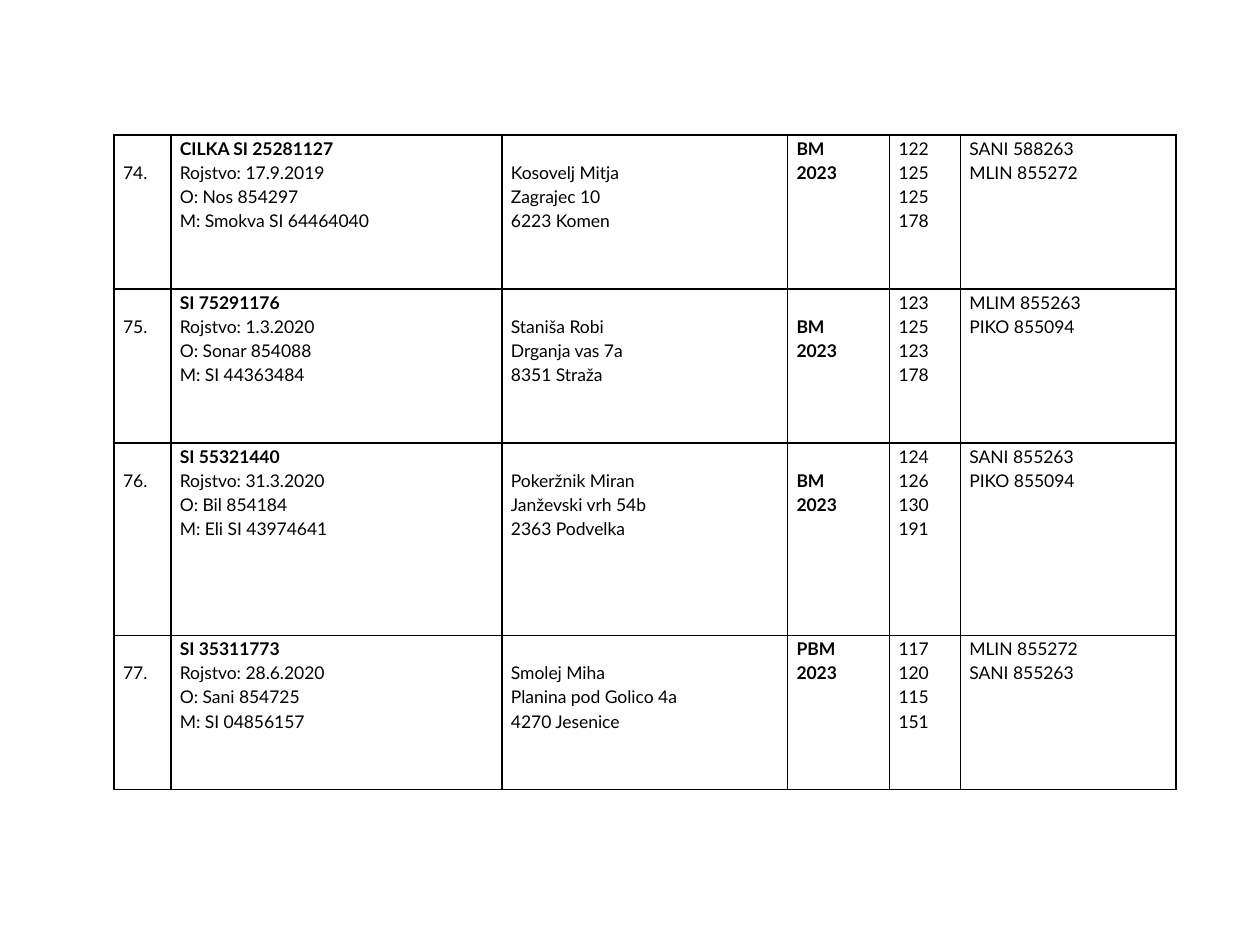
from lxml import etree
from pptx import Presentation
from pptx.dml.color import RGBColor
from pptx.enum.text import PP_ALIGN
from pptx.oxml.ns import qn
from pptx.util import Pt

JUSTIFY = PP_ALIGN.JUSTIFY
FONT = "Lato"
BLACK = "000000"
LINE_PITCH = 13.8
COL_WIDTHS = [32.4, 189.2, 163.2, 58.3, 40.5, 123.2]
ROW_HEIGHTS = [88, 88, 110, 88]
NUMBER, ANIMAL, OWNER, GRADE = range(4)

ROWS = [
    ["74.", "CILKA SI 25281127\nRojstvo: 17.9.2019\nO: Nos 854297\nM: Smokva SI 64464040",
     "Kosovelj Mitja\nZagrajec 10\n6223 Komen", "BM\n2023",
     "122\n125\n125\n178", "SANI 588263\nMLIN 855272"],
    ["75.", "SI 75291176\nRojstvo: 1.3.2020\nO: Sonar 854088\nM: SI 44363484",
     "Staniša Robi\nDrganja vas 7a\n8351 Straža", "BM\n2023",
     "123\n125\n123\n178", "MLIM 855263\nPIKO 855094"],
    ["76.", "SI 55321440\nRojstvo: 31.3.2020\nO: Bil 854184\nM: Eli SI 43974641",
     "Pokeržnik Miran\nJanževski vrh 54b\n2363 Podvelka", "BM\n2023",
     "124\n126\n130\n191", "SANI 855263\nPIKO 855094"],
    ["77.", "SI 35311773\nRojstvo: 28.6.2020\nO: Sani 854725\nM: SI 04856157",
     "Smolej Miha\nPlanina pod Golico 4a\n4270 Jesenice", "PBM\n2023",
     "117\n120\n115\n151", "MLIN 855272\nSANI 855263"],
]
LOWERED_GRADES = {"75.", "76."}


def rgb(value):
    return RGBColor.from_string(value)


def set_borders(cell, color, width):
    tc_pr = cell._tc.get_or_add_tcPr()
    for i, side in enumerate(("a:lnL", "a:lnR", "a:lnT", "a:lnB")):
        ln = etree.Element(qn(side), w=str(Pt(width)))
        fill = etree.SubElement(ln, qn("a:solidFill"))
        etree.SubElement(fill, qn("a:srgbClr"), val=color)
        tc_pr.insert(i, ln)


def fill_cell(cell, text, col, lowered):
    cell.margin_left = cell.margin_right = Pt(5.2)
    cell.margin_top = Pt(LINE_PITCH if lowered else 0)
    cell.margin_bottom = Pt(0)
    cell.fill.background()
    set_borders(cell, BLACK, 1)
    cell.text_frame.text = text
    for i, p in enumerate(cell.text_frame.paragraphs):
        p.alignment = JUSTIFY
        p.line_spacing = 1.15
        for r in p.runs:
            r.font.name = FONT
            r.font.size = Pt(10)
            r.font.bold = col == GRADE or (col == ANIMAL and i == 0)
            r.font.color.rgb = rgb(BLACK)


def add_register(s, left, top, width, height):
    table = s.shapes.add_table(len(ROWS), len(COL_WIDTHS), Pt(left), Pt(top),
                               Pt(width), Pt(height)).table
    table.first_row = False
    table.horz_banding = False
    for column, share in zip(table.columns, COL_WIDTHS):
        column.width = Pt(width * share / sum(COL_WIDTHS))
    for row, share in zip(table.rows, ROW_HEIGHTS):
        row.height = Pt(height * share / sum(ROW_HEIGHTS))
    for i, texts in enumerate(ROWS):
        for col, text in enumerate(texts):
            lowered = col in (NUMBER, OWNER) or (
                col == GRADE and texts[NUMBER] in LOWERED_GRADES)
            fill_cell(table.cell(i, col), text, col, lowered)


def main():
    prs = Presentation()
    prs.slide_width, prs.slide_height = Pt(720), Pt(540)
    s = prs.slides.add_slide(prs.slide_layouts[6])
    add_register(s, 65.2, 77.1, 606.8, 374)
    prs.save("out.pptx")


if __name__ == "__main__":
    main()
